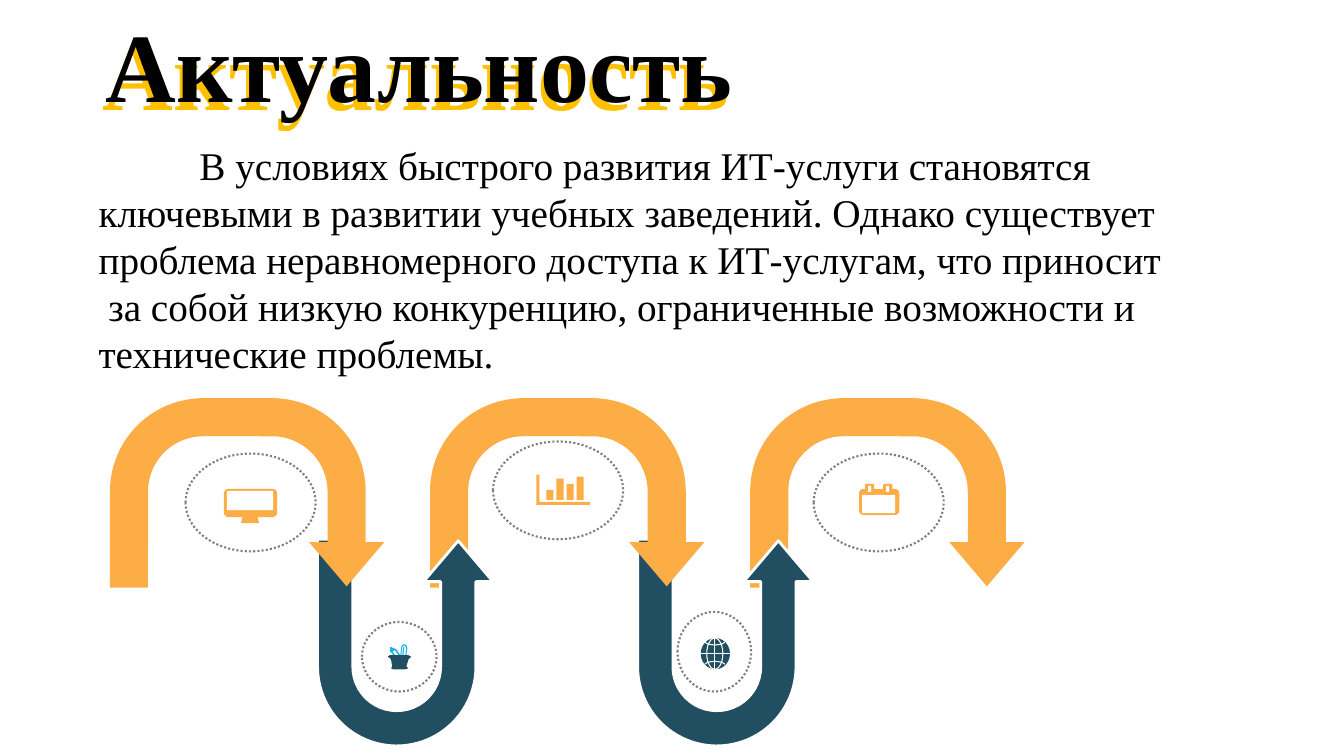
from dataclasses import dataclass

from lxml import etree
from pptx import Presentation
from pptx.dml.color import RGBColor
from pptx.enum.dml import MSO_LINE
from pptx.enum.shapes import MSO_CONNECTOR, MSO_SHAPE
from pptx.enum.text import MSO_ANCHOR
from pptx.oxml.ns import qn
from pptx.util import Inches, Pt

UTURN = MSO_SHAPE.U_TURN_ARROW
OVAL = MSO_SHAPE.OVAL
RECTANGLE = MSO_SHAPE.RECTANGLE
ROUNDED = MSO_SHAPE.ROUNDED_RECTANGLE
TRAPEZOID = MSO_SHAPE.TRAPEZOID
DOTTED = MSO_LINE.ROUND_DOT
STRAIGHT = MSO_CONNECTOR.STRAIGHT
TOP, MIDDLE = MSO_ANCHOR.TOP, MSO_ANCHOR.MIDDLE


@dataclass(frozen=True)
class Theme:
    font: str = "Times New Roman"
    title_size: int = 70
    body_size: int = 28
    black: str = "000000"
    white: str = "FFFFFF"
    gold: str = "FFC000"
    orange: str = "FDAD46"
    navy: str = "214E61"
    cyan: str = "17B5E5"
    gray: str = "808080"


class SlideBuilder:
    def __init__(self, slide, theme):
        self.shapes = slide.shapes
        self.theme = theme

    def text(self, box, words, size, color, bold=False, anchor=TOP, spacing=None, indent=0):
        frame = self.shapes.add_textbox(*map(Inches, box)).text_frame
        frame.word_wrap = True
        frame.vertical_anchor = anchor
        paragraph = frame.paragraphs[0]
        paragraph.text = words
        paragraph.line_spacing = spacing
        if indent:
            paragraph._p.get_or_add_pPr().set("indent", str(Inches(indent)))
        for run in paragraph.runs:
            run.font.name = self.theme.font
            run.font.size = Pt(size)
            run.font.bold = bold
            run.font.color.rgb = RGBColor.from_string(color)

    def paint(self, shape, fill=None, line=None, width=1.0):
        shape.shadow.inherit = False
        if fill:
            shape.fill.solid()
            shape.fill.fore_color.rgb = RGBColor.from_string(fill)
        else:
            shape.fill.background()
        if line:
            shape.line.color.rgb = RGBColor.from_string(line)
            shape.line.width = Pt(width)
        else:
            shape.line.fill.background()
        return shape

    def preset(self, kind, box, fill=None, line=None, width=1.0):
        shape = self.shapes.add_shape(kind, *map(Inches, box))
        return self.paint(shape, fill, line, width)

    def uturn(self, box, fill, line=None, upward=False):
        arrow = self.preset(UTURN, box, fill, line, 2)
        for index, value in enumerate((0.201, 0.198, 0.233, 0.493, 0.993)):
            arrow.adjustments[index] = value
        if upward:
            arrow.rotation = 180
            arrow._element.spPr.find(qn("a:xfrm")).set("flipH", "1")

    def dotted_ring(self, box):
        ring = self.preset(OVAL, box, line=self.theme.gray, width=1.5)
        ring.line.dash_style = DOTTED

    def outline(self, contours, fill=None, line=None, width=1.0, close=True):
        builder = None
        for contour in contours:
            start, *rest = [(Inches(x), Inches(y)) for x, y in contour]
            if builder is None:
                builder = self.shapes.build_freeform(*start)
            else:
                builder.move_to(*start)
            builder.add_line_segments(rest, close=close)
        self.paint(builder.convert_to_shape(), fill, line, width)

    def segment(self, start, end, color, width):
        connector = self.shapes.add_connector(STRAIGHT, *map(Inches, start + end))
        connector.line.color.rgb = RGBColor.from_string(color)
        connector.line.width = Pt(width)
        etree.SubElement(connector._element.spPr, qn("a:effectLst"))

    def monitor(self):
        theme = self.theme
        self.preset(ROUNDED, (2.22, 4.85, 0.53, 0.28), theme.orange)
        self.preset(RECTANGLE, (2.25, 4.87, 0.46, 0.19), theme.white)
        self.preset(TRAPEZOID, (2.39, 5.13, 0.18, 0.06), theme.orange)

    def bar_chart(self):
        axes = [(5.32, 4.71), (5.35, 4.71), (5.35, 4.98), (5.85, 4.98), (5.85, 5.01), (5.32, 5.01)]
        bars = []
        for index, top in enumerate((4.86, 4.75, 4.8, 4.73)):
            left = 5.42 + 0.1 * index
            right = left + 0.07
            bars.append([(left, top), (right, top), (right, 4.96), (left, 4.96)])
        self.outline([axes] + bars, self.theme.orange)

    def calendar(self):
        theme = self.theme
        self.preset(ROUNDED, (8.52, 4.85, 0.4, 0.26), theme.orange)
        self.preset(RECTANGLE, (8.55, 4.91, 0.33, 0.18), theme.white)
        for left in (8.58, 8.76):
            self.preset(ROUNDED, (left, 4.8, 0.09, 0.11), theme.orange)
            self.preset(RECTANGLE, (left + 0.03, 4.82, 0.03, 0.06), theme.white)

    def plant_pot(self):
        leaves = [
            [(3.88, 6.42), (3.93, 6.44), (3.92, 6.45), (3.88, 6.47), (3.87, 6.46), (3.87, 6.42)],
            [(3.87, 6.46), (3.89, 6.46), (3.92, 6.5), (3.91, 6.51)],
            [(3.91, 6.44), (3.93, 6.44), (3.97, 6.5), (3.96, 6.51)],
            [(3.97, 6.51), (3.98, 6.42), (3.99, 6.4), (4.01, 6.39), (4.03, 6.4), (4.04, 6.43),
             (4.03, 6.51), (4.02, 6.51), (4.03, 6.43), (4.02, 6.41), (4.01, 6.4), (4, 6.41),
             (3.99, 6.42), (3.98, 6.51)],
            [(3.99, 6.5), (4, 6.42), (4.01, 6.42), (4, 6.51)],
        ]
        for leaf in leaves:
            self.outline([leaf], self.theme.cyan)
        pot = [(3.87, 6.5), (4.05, 6.5), (4.07, 6.51), (4.08, 6.52), (4.06, 6.53), (4.05, 6.55),
               (4.03, 6.61), (4.05, 6.63), (4.02, 6.64), (3.9, 6.64), (3.88, 6.63), (3.89, 6.61),
               (3.88, 6.55), (3.87, 6.53), (3.85, 6.52), (3.85, 6.51)]
        self.outline([pot], self.theme.navy)

    def globe(self):
        white, width = self.theme.white, 0.75
        self.preset(OVAL, (6.95, 6.33, 0.29, 0.31), self.theme.navy)
        self.preset(OVAL, (7.01, 6.33, 0.16, 0.31), line=white, width=width)
        self.segment((7.09, 6.33), (7.09, 6.64), white, width)
        self.segment((6.95, 6.48), (7.24, 6.48), white, width)
        for side in (-1, 1):
            parallel = [(7.09 + x, 6.48 + side * y) for x, y in
                        ((-0.1, 0.11), (-0.07, 0.09), (0, 0.08), (0.07, 0.09), (0.1, 0.11))]
            self.outline([parallel], line=white, width=width, close=False)


def main():
    presentation = Presentation()
    presentation.slide_width = Inches(13.33)
    presentation.slide_height = Inches(7.5)
    theme = Theme()
    page = SlideBuilder(presentation.slides.add_slide(presentation.slide_layouts[6]), theme)

    heading = "Актуальность"
    page.text((0.92, 0.4, 11.5, 0.77), heading, theme.title_size, theme.gold,
              bold=True, anchor=MIDDLE, spacing=0.9)
    page.text((0.95, 0, 7.36, 1.28), heading, theme.title_size, theme.black, bold=True)

    arrow_step = 3.175
    for index in reversed(range(3)):
        offset = arrow_step * index
        page.uturn((1.09 + offset, 3.95, 2.72, 1.88), theme.orange)
        if index:
            page.uturn((3.15 + offset - arrow_step, 5.35, 1.74, 2.05),
                       theme.navy, theme.white, upward=True)

    stages = [
        ((1.84, 4.5, 1.29, 0.97), page.monitor),
        ((4.89, 4.38, 1.29, 0.97), page.bar_chart),
        ((8.07, 4.5, 1.29, 0.97), page.calendar),
        ((3.59, 6.17, 0.74, 0.69), page.plant_pot),
        ((6.72, 6.07, 0.73, 0.79), page.globe),
    ]
    for ring_box, draw_icon in stages:
        page.dotted_ring(ring_box)
        draw_icon()

    page.text((0.88, 1.35, 10.74, 2.46),
              "В условиях быстрого развития ИТ-услуги становятся ключевыми в развитии "
              "учебных заведений. Однако существует проблема неравномерного доступа к "
              "ИТ-услугам, что приносит  за собой низкую конкуренцию, ограниченные "
              "возможности и технические проблемы.",
              theme.body_size, theme.black, indent=1)
    presentation.save("out.pptx")


if __name__ == "__main__":
    main()
